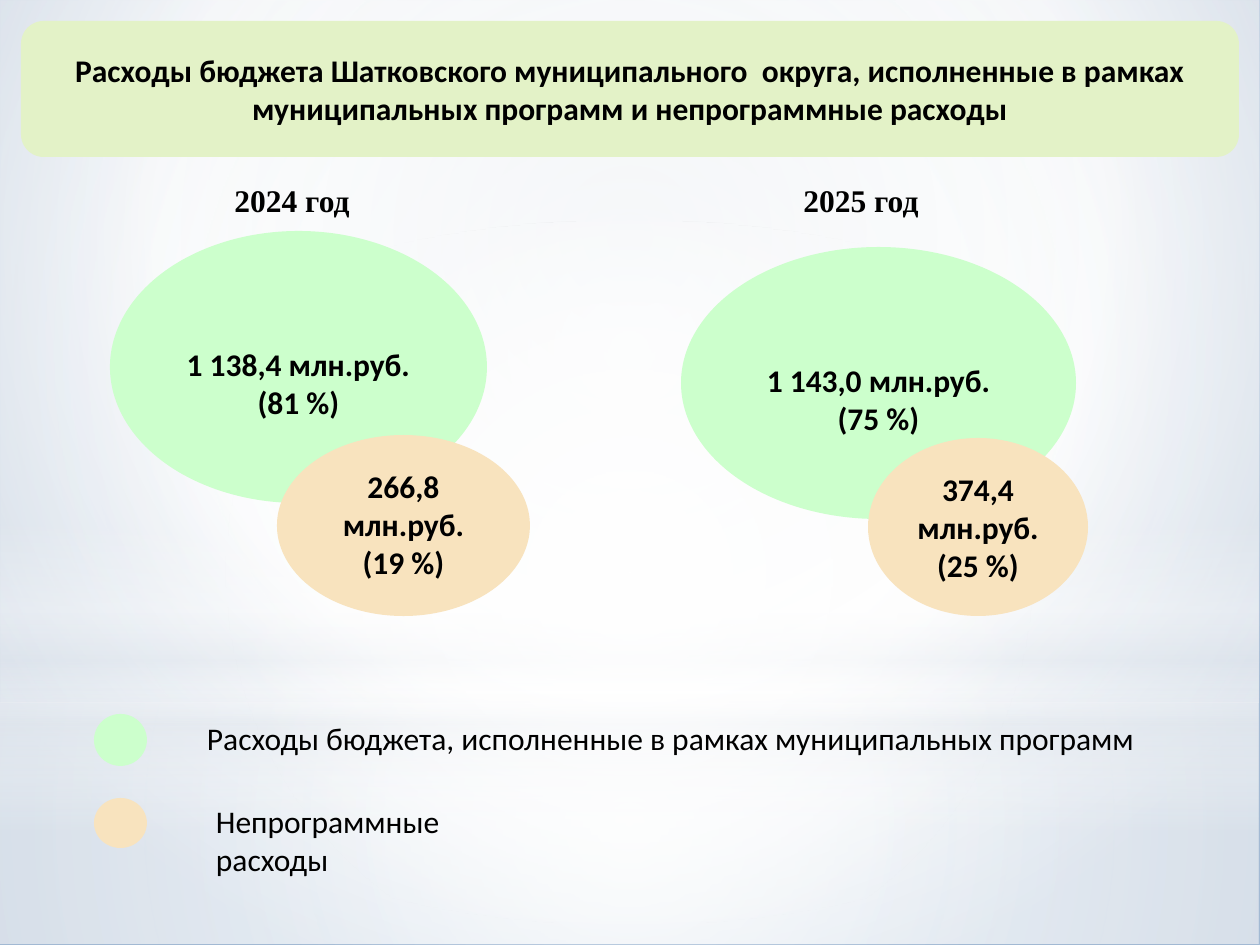
from dataclasses import dataclass

from lxml import etree
from pptx import Presentation
from pptx.dml.color import RGBColor
from pptx.enum.shapes import MSO_SHAPE
from pptx.enum.text import MSO_ANCHOR, PP_ALIGN
from pptx.oxml.ns import nsdecls, qn
from pptx.util import Emu, Pt

RECTANGLE = MSO_SHAPE.RECTANGLE
ROUNDED = MSO_SHAPE.ROUNDED_RECTANGLE
OVAL = MSO_SHAPE.OVAL
CONNECTOR_CIRCLE = MSO_SHAPE.FLOWCHART_CONNECTOR
TOP, MIDDLE = MSO_ANCHOR.TOP, MSO_ANCHOR.MIDDLE
LEFT, CENTER = PP_ALIGN.LEFT, PP_ALIGN.CENTER


@dataclass(frozen=True)
class Theme:
    title_fill: str = "E3F2C7"
    program: str = "CCFFCC"
    other: str = "F8E3BE"
    text: str = "000000"
    body_font: str = "Calibri"
    year_font: str = "Times New Roman"
    size: int = 18
    white: str = "FFFFFF"
    mist: str = "E4E9EF"
    sky: str = "D7DFE7"
    blue: str = "A2B9D3"


THEME = Theme()

# Content: boxes are left, top, width, height in px
WIDTH, HEIGHT = 1260, 945
TITLE = ("Расходы бюджета Шатковского муниципального  округа, исполненные "
         "в рамках муниципальных программ и непрограммные расходы")
TITLE_BOX = (21, 21, 1218, 136)
YEARS = [
    {"label": "2024 год", "label_box": (149, 175, 286, 49),
     "program": ["1 138,4 млн.руб.", "(81 %)"], "program_box": (110, 231, 377, 272),
     "other": ["266,8 млн.руб.", "(19 %)"], "other_box": (277, 435, 253, 181)},
    {"label": "2025 год", "label_box": (728, 175, 266, 49),
     "program": ["1 143,0 млн.руб.", "(75 %)"], "program_box": (681, 247, 395, 272),
     "other": ["374,4 млн.руб.", "(25 %)"], "other_box": (868, 438, 220, 178)},
]
LEGEND = [
    ("Расходы бюджета, исполненные в рамках муниципальных программ",
     THEME.program, (94, 714, 53, 52), (194, 713, 971, 51)),
    ("Непрограммные расходы",
     THEME.other, (94, 798, 53, 50), (203, 796, 368, 51)),
]

# Gradient stops are position %, colour, opacity %
CENTERED = (50, 50, 50, 50)
BACKGROUND_STOPS = [(0, THEME.sky, 100), (60, THEME.white, 100), (100, THEME.blue, 100)]
BACKGROUND_FOCUS = (50, 25, 50, 75)
BACKDROP = [
    (RECTANGLE, (0, 703, 1259, 241), CENTERED,
     [(0, THEME.white, 91), (37, THEME.white, 76), (100, THEME.mist, 79)]),
    (RECTANGLE, (0, 0, 1259, 703), CENTERED,
     [(0, THEME.white, 89), (48, THEME.white, 62), (100, THEME.mist, 79)]),
    (RECTANGLE, (0, 519, 1259, 314), None,
     [(0, THEME.white, 0), (29, THEME.white, 30), (45, THEME.mist, 40),
      (55, THEME.white, 26), (65, THEME.mist, 60), (100, THEME.white, 0)]),
    (OVAL, (0, 221, 1259, 703), CENTERED,
     [(0, THEME.white, 100), (56, THEME.white, 0)]),
]
INSET_X, INSET_Y = 13, 6
PROGRAM_INSET = 74  # lowers the amount inside the large ellipse


def px(value):
    return Emu(round(value * 914400 / 126))


def gradient(stops, focus):
    """Circular gradient around focus, or a vertical one without focus."""
    stop_xml = "".join(
        f'<a:gs pos="{position * 1000}"><a:srgbClr val="{color}">'
        f'<a:alpha val="{opacity * 1000}"/></a:srgbClr></a:gs>'
        for position, color, opacity in stops)
    if focus:
        sides = " ".join(f'{side}="{value * 1000}"' for side, value in zip("ltrb", focus))
        direction = f'<a:path path="circle"><a:fillToRect {sides}/></a:path>'
    else:
        direction = '<a:lin ang="5400000" scaled="0"/>'
    return etree.fromstring(
        f'<a:gradFill {nsdecls("a")} rotWithShape="1"><a:gsLst>{stop_xml}</a:gsLst>'
        f'{direction}</a:gradFill>')


def use_gradient(properties, stops, focus):
    properties.replace(properties.find(qn("a:solidFill")), gradient(stops, focus))


def add_shape(slide, kind, box, color):
    shape = slide.shapes.add_shape(kind, *map(px, box))
    shape.shadow.inherit = False
    shape.fill.solid()
    shape.fill.fore_color.rgb = RGBColor.from_string(color)
    shape.line.fill.background()
    return shape


def write(shape, lines, align=CENTER, anchor=MIDDLE, bold=True,
          font=THEME.body_font, inset_top=INSET_Y, wrap=True):
    frame = shape.text_frame
    frame.word_wrap = wrap
    frame.vertical_anchor = anchor
    frame.margin_left = frame.margin_right = px(INSET_X)
    frame.margin_top, frame.margin_bottom = px(inset_top), px(INSET_Y)
    frame.text = "\n".join(lines)
    for paragraph in frame.paragraphs:
        paragraph.alignment = align
        paragraph.font.name = font
        paragraph.font.size = Pt(THEME.size)
        paragraph.font.bold = bold
        paragraph.font.color.rgb = RGBColor.from_string(THEME.text)


def add_text(slide, box, text, **style):
    write(slide.shapes.add_textbox(*map(px, box)), [text], **style)


def main():
    presentation = Presentation()
    presentation.slide_width, presentation.slide_height = px(WIDTH), px(HEIGHT)
    slide = presentation.slides.add_slide(presentation.slide_layouts[6])

    # Background and soft light layers
    slide.background.fill.solid()
    background = next(slide.element.iter(qn("p:bgPr")))
    use_gradient(background, BACKGROUND_STOPS, BACKGROUND_FOCUS)
    for kind, box, focus, stops in BACKDROP:
        layer = add_shape(slide, kind, box, THEME.white)
        use_gradient(layer.element.spPr, stops, focus)

    # Title
    write(add_shape(slide, ROUNDED, TITLE_BOX, THEME.title_fill), [TITLE])

    # Yearly pairs of ellipses
    for year in YEARS:
        program = add_shape(slide, CONNECTOR_CIRCLE, year["program_box"], THEME.program)
        write(program, year["program"], anchor=TOP, inset_top=PROGRAM_INSET)
        other = add_shape(slide, CONNECTOR_CIRCLE, year["other_box"], THEME.other)
        write(other, year["other"], anchor=TOP)
        add_text(slide, year["label_box"], year["label"], font=THEME.year_font)

    # Legend
    for label, color, marker_box, label_box in LEGEND:
        add_shape(slide, OVAL, marker_box, color)
        add_text(slide, label_box, label, align=LEFT, anchor=TOP, bold=False, wrap=False)

    presentation.save("out.pptx")


if __name__ == "__main__":
    main()
